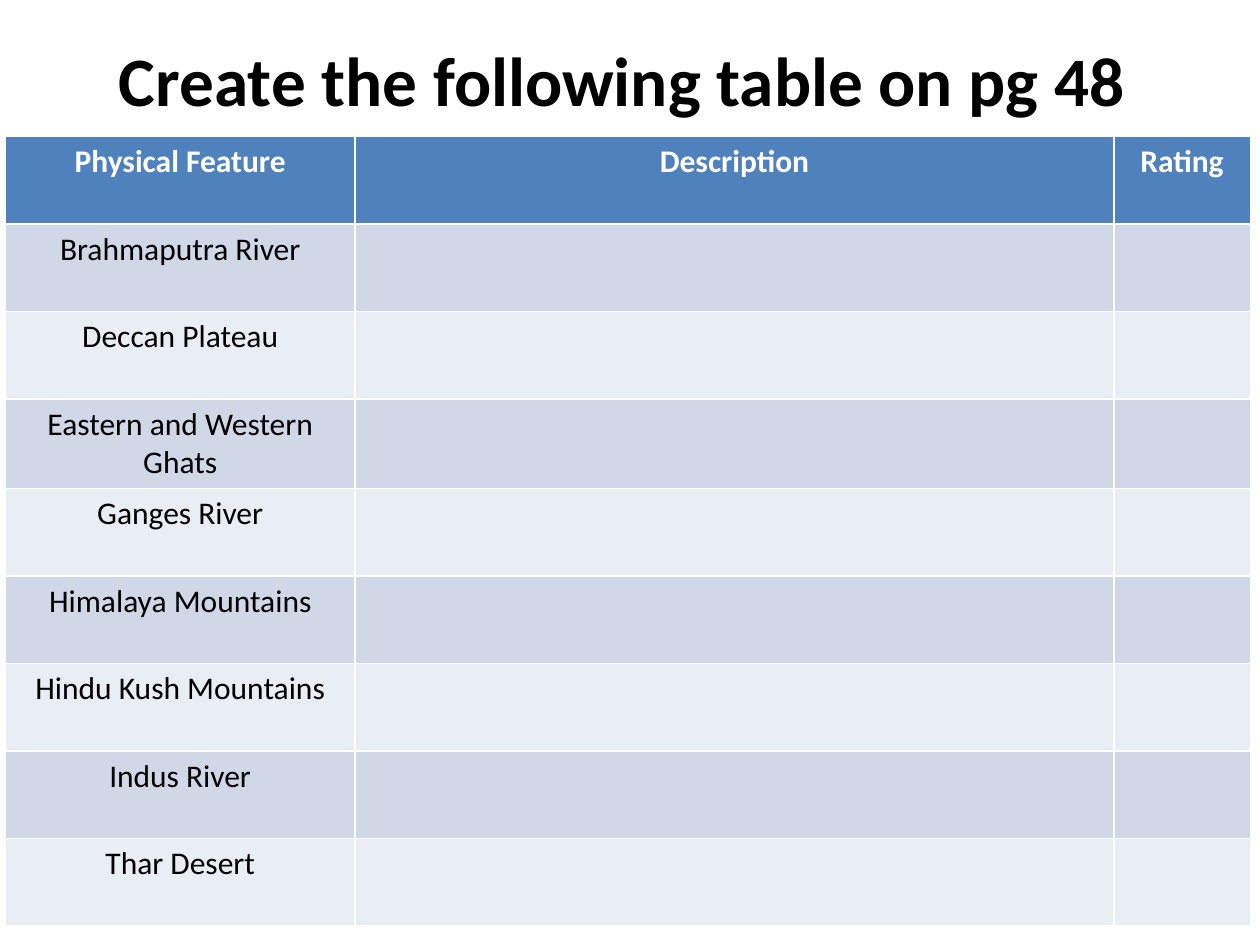
"""Build a slide with a table of physical features to describe and rate."""
from pptx import Presentation
from pptx.dml.color import RGBColor
from pptx.enum.text import MSO_ANCHOR, MSO_AUTO_SIZE, PP_ALIGN
from pptx.util import Pt


def write_text(text_frame, text, size, color, bold):
    text_frame.text = text
    paragraph = text_frame.paragraphs[0]
    paragraph.alignment = PP_ALIGN.CENTER
    for run in paragraph.runs:
        run.font.name = "Calibri"
        run.font.size = Pt(size)
        run.font.bold = bold
        run.font.color.rgb = RGBColor.from_string(color)


presentation = Presentation()
presentation.slide_width, presentation.slide_height = Pt(720), Pt(540)
slide = presentation.slides.add_slide(presentation.slide_layouts[5])

title = slide.shapes.title
title.left, title.top, title.width, title.height = Pt(36), Pt(0), Pt(648), Pt(90)
title.text_frame.auto_size = MSO_AUTO_SIZE.NONE
title.text_frame.vertical_anchor = MSO_ANCHOR.MIDDLE
write_text(title.text_frame, "Create the following table on pg 48 ", 39.6, "000000", True)

headings = ["Physical Feature", "Description", "Rating"]
features = [
    "Brahmaputra River",
    "Deccan Plateau",
    "Eastern and Western Ghats",
    "Ganges River",
    "Himalaya Mountains",
    "Hindu Kush Mountains",
    "Indus River",
    "Thar Desert",
]
rows = [headings] + [[feature, "", ""] for feature in features]
column_widths = [200, 433.5, 78]
row_height = 50

table = slide.shapes.add_table(
    len(rows), len(headings), Pt(3), Pt(78),
    Pt(sum(column_widths)), Pt(row_height * len(rows)),
).table
for column, width in zip(table.columns, column_widths):
    column.width = Pt(width)

for row_index, texts in enumerate(rows):
    is_header = row_index == 0
    band_color = "D0D8E8" if row_index % 2 else "E9EDF4"
    table.rows[row_index].height = Pt(row_height)
    for column_index, text in enumerate(texts):
        cell = table.cell(row_index, column_index)
        cell.fill.solid()
        cell.fill.fore_color.rgb = RGBColor.from_string("4F81BD" if is_header else band_color)
        write_text(cell.text_frame, text, 18, "FFFFFF" if is_header else "000000", is_header)

presentation.save("out.pptx")
